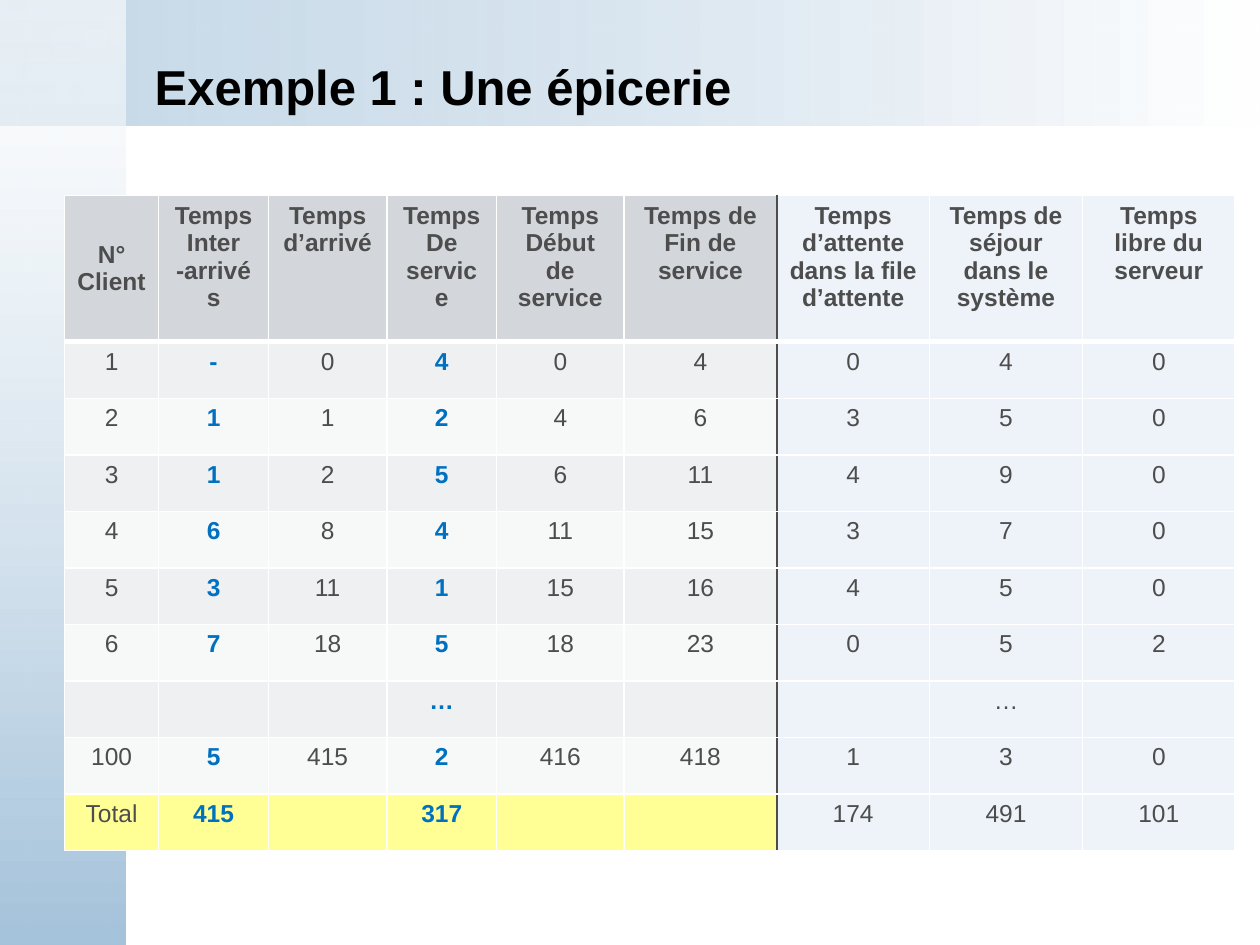
"""Build the grocery store queue simulation slide."""
from lxml.etree import SubElement
from pptx import Presentation
from pptx.dml.color import RGBColor as RGB
from pptx.enum.shapes import MSO_SHAPE as Preset
from pptx.enum.text import MSO_ANCHOR as Anchor, PP_ALIGN as Align
from pptx.oxml.ns import qn
from pptx.util import Cm, Pt

COLORS = {
    "white": "FFFFFF", "band": "A5C3DB", "title": "000000", "text": "4D4D4D",
    "accent": "0070C0", "header": "D3D7DB", "odd": "EFF0F1", "even": "F7F8F8",
    "result": "EDF3F8", "total": "FFFF95",
}
WIDTHS = [1.9, 2.21, 2.39, 2.21, 2.57] + [3.08] * 4
HEADER_HEIGHT, ROW_HEIGHT = 2.95, 1.14
INPUT_COLUMNS = (1, 3)
FIRST_RESULT = 6
ROWS = [
    ["N° Client", "Temps Inter -arrivés", "Temps d’arrivé", "Temps De service",
     "Temps Début de service", "Temps de Fin de service",
     "Temps d’attente dans la file d’attente",
     "Temps de séjour dans le système", "Temps libre du serveur"],
    ["1", "-", "0", "4", "0", "4", "0", "4", "0"],
    ["2", "1", "1", "2", "4", "6", "3", "5", "0"],
    ["3", "1", "2", "5", "6", "11", "4", "9", "0"],
    ["4", "6", "8", "4", "11", "15", "3", "7", "0"],
    ["5", "3", "11", "1", "15", "16", "4", "5", "0"],
    ["6", "7", "18", "5", "18", "23", "0", "5", "2"],
    ["", "", "", "…", "", "", "", "…", ""],
    ["100", "5", "415", "2", "416", "418", "1", "3", "0"],
    ["Total", "415", "", "317", "", "", "174", "491", "101"],
]


class SlideBuilder:
    def __init__(self, slide, font="Arial"):
        self.slide = slide
        self.font = font

    def add_run(self, paragraph, text, size, color, bold):
        run = paragraph.add_run()
        run.text = text
        run.font.name = self.font
        run.font.size = Pt(size)
        run.font.bold = bold
        run.font.color.rgb = RGB.from_string(COLORS[color])

    def add_band(self, width, height, colors, angle, opacity):
        shape = self.slide.shapes.add_shape(Preset.RECTANGLE, 0, 0, Cm(width), Cm(height))
        shape.shadow.inherit = False
        shape.line.fill.background()
        shape.fill.gradient()
        shape.fill.gradient_angle = angle
        for stop, color in zip(shape.fill.gradient_stops, colors):
            stop.color.rgb = RGB.from_string(COLORS[color])
        first_color = next(shape._element.iter(qn("a:srgbClr")))
        SubElement(first_color, qn("a:alpha"), val=str(opacity * 1000))

    def add_title(self, text, left, top, width, height):
        box = self.slide.shapes.add_textbox(Cm(left), Cm(top), Cm(width), Cm(height))
        frame = box.text_frame
        frame.word_wrap = True
        frame.vertical_anchor = Anchor.MIDDLE
        self.add_run(frame.paragraphs[0], text, 28, "title", True)

    def add_border(self, cell, side, color, width):
        properties = cell._tc.get_or_add_tcPr()
        line = SubElement(properties, qn(f"a:ln{side}"), w=str(Pt(width)))
        fill = SubElement(line, qn("a:solidFill"))
        SubElement(fill, qn("a:srgbClr"), val=COLORS[color])

    def fill_cell(self, cell, text, row, column):
        is_header = row == 0
        borders = {
            "L": ("text" if column == FIRST_RESULT else "white", 1),
            "R": ("text" if column == FIRST_RESULT - 1 else "white", 1),
            "T": ("white", 1),
            "B": ("white", 3 if is_header else 1),
        }
        for side, (color, width) in borders.items():
            self.add_border(cell, side, color, width)
        if column >= FIRST_RESULT:
            background = "result"
        elif is_header:
            background = "header"
        elif row == len(ROWS) - 1:
            background = "total"
        else:
            background = "odd" if row % 2 else "even"
        cell.fill.solid()
        cell.fill.fore_color.rgb = RGB.from_string(COLORS[background])
        cell.vertical_anchor = Anchor.MIDDLE if row == column == 0 else Anchor.TOP
        paragraph = cell.text_frame.paragraphs[0]
        paragraph.alignment = Align.CENTER
        if text:
            is_input = not is_header and column in INPUT_COLUMNS
            color = "accent" if is_input else "text"
            self.add_run(paragraph, text, 14, color, is_header or is_input)

    def add_table(self, rows, left, top):
        heights = [HEADER_HEIGHT] + [ROW_HEIGHT] * (len(rows) - 1)
        table = self.slide.shapes.add_table(
            len(rows), len(WIDTHS), Cm(left), Cm(top), Cm(sum(WIDTHS)), Cm(sum(heights))
        ).table
        for column, width in zip(table.columns, WIDTHS):
            column.width = Cm(width)
        for row, height in zip(table.rows, heights):
            row.height = Cm(height)
        for row, texts in enumerate(rows):
            for column, text in enumerate(texts):
                self.fill_cell(table.cell(row, column), text, row, column)


def main():
    presentation = Presentation()
    presentation.slide_width, presentation.slide_height = Cm(25.4), Cm(19.05)
    builder = SlideBuilder(presentation.slides.add_slide(presentation.slide_layouts[6]))
    builder.add_band(25.4, 2.54, ("band", "white"), 0, 62)
    builder.add_band(2.54, 19.05, ("white", "band"), 270, 59)
    builder.add_title("Exemple 1 : Une épicerie", 2.87, 1.12, 21.46, 1.24)
    builder.add_table(ROWS, 1.3, 3.94)
    presentation.save("out.pptx")


if __name__ == "__main__":
    main()
